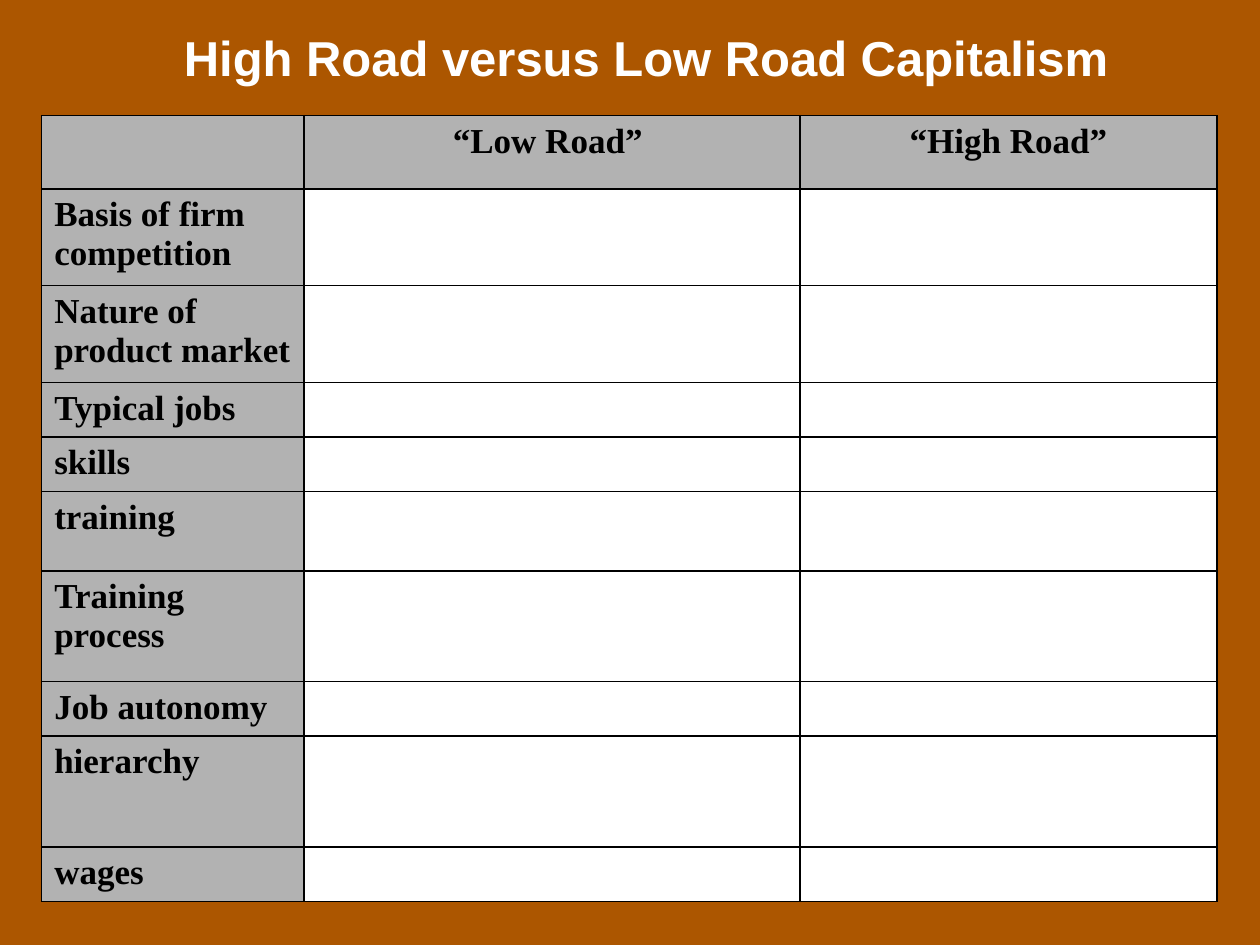
from lxml import etree
from pptx import Presentation
from pptx.dml.color import RGBColor
from pptx.enum.text import MSO_ANCHOR, PP_ALIGN
from pptx.oxml.ns import qn
from pptx.util import Cm, Pt

LEFT, CENTER = PP_ALIGN.LEFT, PP_ALIGN.CENTER
MIDDLE = MSO_ANCHOR.MIDDLE
TITLE_ONLY = 5

COLORS = {"back": "AC5600", "head": "B2B2B2", "body": "FFFFFF",
          "ink": "000000", "title": "FFFFFF"}
WIDTHS = [5.29, 10, 8.4]
HEADS = ["", "“Low Road” ", "“High Road”"]
# Row label and row height in cm
ROWS = [
    ("Basis of firm competition", 1.95),
    ("Nature of product market", 1.95),
    ("Typical jobs", 1.1),
    ("skills", 1.1),
    ("training", 1.6),
    ("Training\nprocess", 2.23),
    ("Job autonomy", 1.1),
    ("hierarchy", 2.23),
    ("wages", 1.1),
]
HEAD_HEIGHT = 1.48


def color(name):
    return RGBColor.from_string(COLORS[name])


def write(frame, text, font="Times New Roman", size=20, ink="ink", align=LEFT):
    """Fill a text frame with bold text, one paragraph a line."""
    frame.text = text
    for para in frame.paragraphs:
        para.alignment = align
        for run in para.runs:
            run.font.name = font
            run.font.size = Pt(size)
            run.font.bold = True
            run.font.color.rgb = color(ink)


class Deck:
    def __init__(self):
        self.show = Presentation()
        self.show.slide_width, self.show.slide_height = Cm(25.4), Cm(19.05)
        self.slide = self.show.slides.add_slide(self.show.slide_layouts[TITLE_ONLY])
        fill = self.slide.background.fill
        fill.solid()
        fill.fore_color.rgb = color("back")

    def title(self, text, left, top, width, height):
        shape = self.slide.shapes.title
        shape.left, shape.top = Cm(left), Cm(top)
        shape.width, shape.height = Cm(width), Cm(height)
        shape.text_frame.vertical_anchor = MIDDLE
        write(shape.text_frame, text, font="Arial", size=28, ink="title", align=CENTER)

    def border(self, cell):
        """Draw a 1 pt line on all four sides; call before the fill is set."""
        props = cell._tc.get_or_add_tcPr()
        for side in ("lnL", "lnR", "lnT", "lnB"):
            line = etree.SubElement(props, qn(f"a:{side}"), w=str(Pt(1)))
            fill = etree.SubElement(line, qn("a:solidFill"))
            etree.SubElement(fill, qn("a:srgbClr"), val=COLORS["ink"])

    def cell(self, cell, text, fill, align):
        self.border(cell)
        cell.fill.solid()
        cell.fill.fore_color.rgb = color(fill)
        write(cell.text_frame, text, align=align)

    def table(self, left, top):
        heights = [HEAD_HEIGHT] + [height for _, height in ROWS]
        grid = self.slide.shapes.add_table(
            len(heights), len(WIDTHS), Cm(left), Cm(top),
            Cm(sum(WIDTHS)), Cm(sum(heights))).table
        for col, width in zip(grid.columns, WIDTHS):
            col.width = Cm(width)
        for row, height in zip(grid.rows, heights):
            row.height = Cm(height)
        texts = [HEADS] + [[label, "", ""] for label, _ in ROWS]
        for r, line in enumerate(texts):
            for c, text in enumerate(line):
                fill = "body" if r and c else "head"
                self.cell(grid.cell(r, c), text, fill, LEFT if r else CENTER)


def main():
    deck = Deck()
    deck.title("High Road versus Low Road Capitalism", 3.18, 0.43, 19.69, 1.45)
    deck.table(0.84, 2.33)
    deck.show.save("out.pptx")


if __name__ == "__main__":
    main()
